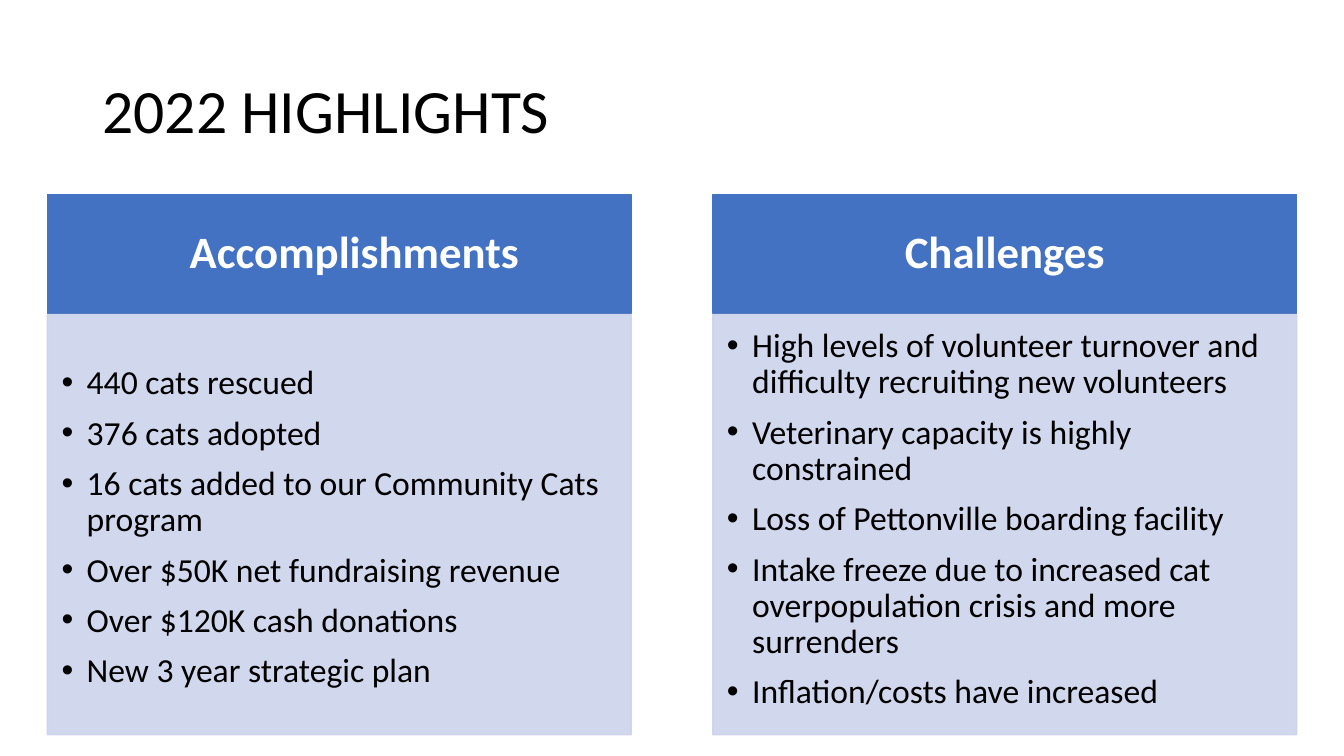
from dataclasses import dataclass

from lxml.etree import SubElement
from pptx import Presentation
from pptx.dml.color import RGBColor
from pptx.enum.shapes import MSO_SHAPE
from pptx.enum.text import MSO_ANCHOR, PP_ALIGN
from pptx.oxml.ns import qn
from pptx.util import Inches, Pt


@dataclass(frozen=True)
class Theme:
    font: str = "Calibri"
    text: RGBColor = RGBColor(0x00, 0x00, 0x00)
    header_text: RGBColor = RGBColor(0xFF, 0xFF, 0xFF)
    header_fill: RGBColor = RGBColor(0x43, 0x72, 0xC3)
    body_fill: RGBColor = RGBColor(0xCC, 0xD3, 0xEA)
    body_alpha: int = 89
    title_size: Pt = Pt(44)
    header_size: Pt = Pt(32)
    body_size: Pt = Pt(24)


THEME = Theme()

COLUMN_LEFT, COLUMN_STEP, COLUMN_WIDTH = 0.47, 6.6, 5.79
HEADER_TOP, HEADER_HEIGHT = 1.93, 1.18
BODY_TOP, BODY_HEIGHT = 3.12, 4.17

# Heading, left inset of the heading, top inset of the list, list items
COLUMNS = [
    ("Accomplishments", 0.55, 0.51, [
        "440 cats rescued",
        "376 cats adopted",
        "16 cats added to our Community Cats program",
        "Over $50K net fundraising revenue",
        "Over $120K cash donations",
        "New 3 year strategic plan",
    ]),
    ("Challenges", 0.25, 0.14, [
        "High levels of volunteer turnover and difficulty recruiting new volunteers",
        "Veterinary capacity is highly constrained",
        "Loss of Pettonville boarding facility",
        "Intake freeze due to increased cat overpopulation crisis and more surrenders",
        "Inflation/costs have increased",
    ]),
]


def set_frame(tf, anchor, insets):
    """Wrap the text and set its anchor and left, top, right, bottom insets."""
    tf.word_wrap = True
    tf.vertical_anchor = anchor
    tf.margin_left, tf.margin_top, tf.margin_right, tf.margin_bottom = map(Inches, insets)


def write(p, text, size, color, align=PP_ALIGN.LEFT, bold=False):
    p.text = text
    p.alignment = align
    p.line_spacing = 0.9
    font = p.runs[0].font
    font.name, font.size, font.bold = THEME.font, size, bold
    font.color.rgb = color


def add_bullet(p):
    pPr = p._p.get_or_add_pPr()
    pPr.set("marL", str(Inches(0.25)))
    pPr.set("indent", str(-Inches(0.25)))
    SubElement(pPr, qn("a:buFont"), typeface="Arial")
    SubElement(pPr, qn("a:buChar"), char="•")


def set_alpha(sp, percent):
    for color in sp._element.spPr.iter(qn("a:srgbClr")):
        SubElement(color, qn("a:alpha"), val=str(percent * 1000))


def add_block(s, left, top, height, color):
    sp = s.shapes.add_shape(MSO_SHAPE.RECTANGLE, Inches(left), Inches(top),
                            Inches(COLUMN_WIDTH), Inches(height))
    sp.shadow.inherit = False
    sp.fill.solid()
    sp.fill.fore_color.rgb = color
    sp.line.color.rgb = color
    sp.line.width = Pt(1)
    return sp


def add_title(s, text):
    tf = s.shapes.add_textbox(Inches(0.92), Inches(0.4), Inches(11.5), Inches(1.45)).text_frame
    set_frame(tf, MSO_ANCHOR.MIDDLE, (0.1, 0.05, 0.1, 0.05))
    write(tf.paragraphs[0], text, THEME.title_size, THEME.text)


def add_header(s, left, text, left_inset):
    sp = add_block(s, left, HEADER_TOP, HEADER_HEIGHT, THEME.header_fill)
    set_frame(sp.text_frame, MSO_ANCHOR.MIDDLE, (left_inset, 0.14, 0.25, 0.14))
    write(sp.text_frame.paragraphs[0], text, THEME.header_size, THEME.header_text,
          PP_ALIGN.CENTER, bold=True)


def add_list(s, left, items, top_inset):
    sp = add_block(s, left, BODY_TOP, BODY_HEIGHT, THEME.body_fill)
    set_alpha(sp, THEME.body_alpha)
    tf = sp.text_frame
    set_frame(tf, MSO_ANCHOR.TOP, (0.14, top_inset, 0.19, 0.21))
    for i, item in enumerate(items):
        p = tf.add_paragraph() if i else tf.paragraphs[0]
        write(p, item, THEME.body_size, THEME.text)
        p.space_before = Pt(10)
        add_bullet(p)


def main():
    prs = Presentation()
    prs.slide_width, prs.slide_height = Inches(13.33), Inches(7.5)
    s = prs.slides.add_slide(prs.slide_layouts[6])
    add_title(s, "2022 HIGHLIGHTS")
    for i, (heading, left_inset, top_inset, items) in enumerate(COLUMNS):
        left = COLUMN_LEFT + i * COLUMN_STEP
        add_header(s, left, heading, left_inset)
        add_list(s, left, items, top_inset)
    prs.save("out.pptx")


if __name__ == "__main__":
    main()
